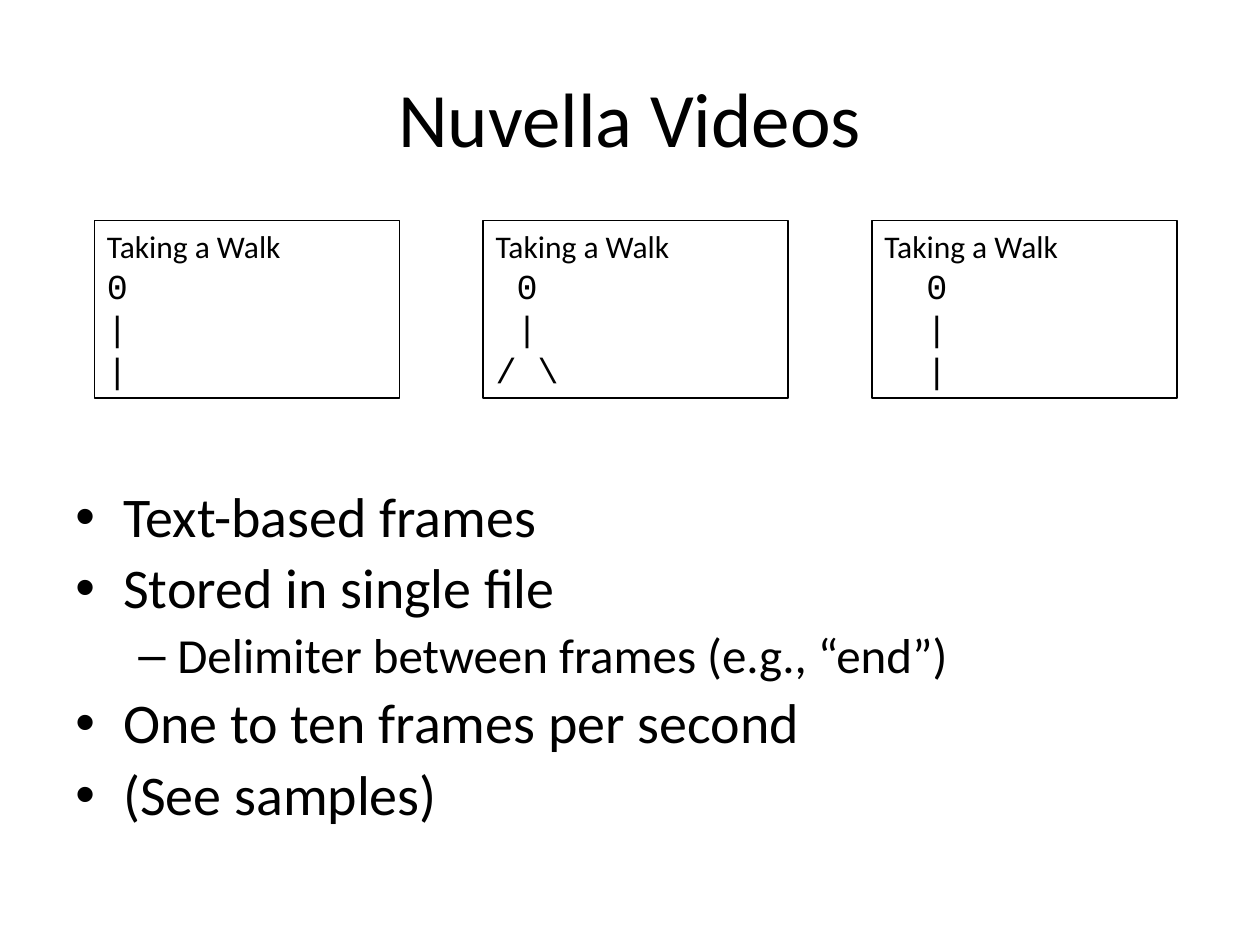
from dataclasses import dataclass

from lxml.etree import SubElement
from pptx import Presentation
from pptx.dml.color import RGBColor
from pptx.enum.shapes import MSO_SHAPE as Shape
from pptx.enum.text import MSO_ANCHOR as Anchor, MSO_AUTO_SIZE as AutoSize, PP_ALIGN as Align
from pptx.oxml.ns import qn
from pptx.util import Inches, Pt


@dataclass(frozen=True)
class Theme:
    ink: RGBColor = RGBColor(0, 0, 0)
    body_font: str = "Calibri"
    drawing_font: str = "Courier New"
    title_size: int = 44
    bullet_sizes: tuple = (32, 28)
    caption_size: int = 18
    drawing_size: int = 20


THEME = Theme()
BULLET_LEVELS = (("•", 0.38, -0.38), ("–", 0.81, -0.31))
BULLETS = (
    ("Text-based frames", 0),
    ("Stored in single file", 0),
    ("Delimiter between frames (e.g., “end”)", 1),
    ("One to ten frames per second", 0),
    ("(See samples)", 0),
)
CAPTION = "Taking a Walk"
WALK_FRAMES = (("0", "|", "|"), (" 0", " |", "/ \\"), ("  0", "  |", "  |"))


def style_paragraph(paragraph, size, font=THEME.body_font):
    for run in paragraph.runs:
        run.font.name = font
        run.font.size = Pt(size)
        run.font.color.rgb = THEME.ink


def set_space_before(paragraph, percent):
    spacing = SubElement(paragraph._p.get_or_add_pPr(), qn("a:spcBef"))
    SubElement(spacing, qn("a:spcPct")).set("val", str(percent * 1000))


def set_bullet(paragraph, level):
    character, margin, indent = BULLET_LEVELS[level]
    properties = paragraph._p.get_or_add_pPr()
    properties.set("marL", str(Inches(margin)))
    properties.set("indent", str(Inches(indent)))
    SubElement(properties, qn("a:buFont")).set("typeface", "Arial")
    SubElement(properties, qn("a:buChar")).set("char", character)


def add_title(slide, left, top, width, height):
    text_frame = slide.shapes.add_textbox(left, top, width, height).text_frame
    text_frame.word_wrap = True
    text_frame.vertical_anchor = Anchor.MIDDLE
    text_frame.text = "Nuvella Videos"
    paragraph = text_frame.paragraphs[0]
    paragraph.alignment = Align.CENTER
    style_paragraph(paragraph, THEME.title_size)


def add_bullets(slide, left, top, width, height):
    text_frame = slide.shapes.add_textbox(left, top, width, height).text_frame
    text_frame.word_wrap = True
    text_frame.text = "\n".join(text for text, level in BULLETS)
    for paragraph, (text, level) in zip(text_frame.paragraphs, BULLETS):
        paragraph.level = level
        paragraph.line_spacing = 0.9
        set_space_before(paragraph, 20)
        set_bullet(paragraph, level)
        style_paragraph(paragraph, THEME.bullet_sizes[level])


def add_video_frame(slide, drawing, left, top, width, height):
    shape = slide.shapes.add_shape(Shape.RECTANGLE, left, top, width, height)
    shape.shadow.inherit = False
    shape.fill.background()
    shape.line.color.rgb = THEME.ink
    shape.line.width = Pt(1)
    text_frame = shape.text_frame
    text_frame.word_wrap = True
    text_frame.auto_size = AutoSize.SHAPE_TO_FIT_TEXT
    text_frame.vertical_anchor = Anchor.TOP
    text_frame.text = "\n".join((CAPTION, *drawing))
    for paragraph in text_frame.paragraphs:
        paragraph.alignment = Align.LEFT
        style_paragraph(paragraph, THEME.drawing_size, THEME.drawing_font)
    caption = text_frame.paragraphs[0]
    set_space_before(caption, 50)
    style_paragraph(caption, THEME.caption_size)


def add_filmstrip(slide, left, top, width, height):
    frame_width = Inches(2.42)
    step = (width - frame_width) // (len(WALK_FRAMES) - 1)
    for index, drawing in enumerate(WALK_FRAMES):
        add_video_frame(slide, drawing, left + index * step, top, frame_width, height)


def main():
    presentation = Presentation()
    presentation.slide_width = Inches(10)
    presentation.slide_height = Inches(7.5)
    slide = presentation.slides.add_slide(presentation.slide_layouts[6])
    add_title(slide, Inches(0.5), Inches(0.3), Inches(9), Inches(1.25))
    add_bullets(slide, Inches(0.5), Inches(3.83), Inches(9), Inches(2.87))
    add_filmstrip(slide, Inches(0.75), Inches(1.75), Inches(8.59), Inches(1.41))
    presentation.save("out.pptx")


if __name__ == "__main__":
    main()
